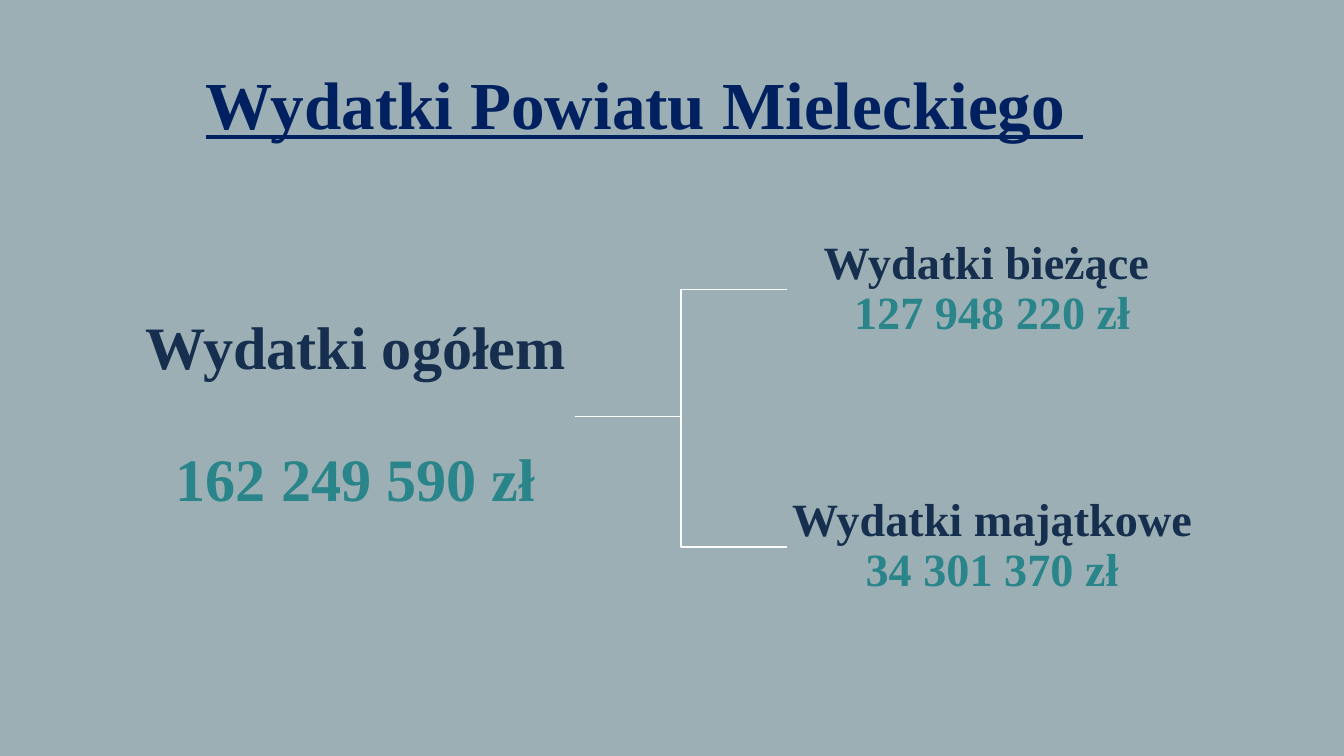
"""Build a slide that splits the county's total spending into two parts."""
from lxml.etree import SubElement
from pptx import Presentation
from pptx.dml.color import RGBColor
from pptx.enum.shapes import MSO_CONNECTOR, MSO_SHAPE
from pptx.enum.text import MSO_ANCHOR, PP_ALIGN
from pptx.oxml.ns import qn
from pptx.util import Inches, Pt

COLORS = {"bg": "9BAFB5", "title": "002060", "name": "162F4E",
          "amount": "2A858A", "line": "FFFFFF"}
FONT = "Times New Roman"


def rgb(key):
    return RGBColor.from_string(COLORS[key])


def style(p, size, *colors):
    p.alignment = PP_ALIGN.CENTER
    p.line_spacing = 0.9
    for r, color in zip(p.runs, colors):
        r.font.name = FONT
        r.font.size = Pt(size)
        r.font.bold = True
        r.font.color.rgb = rgb(color)


prs = Presentation()
prs.slide_width, prs.slide_height = Inches(13.33), Inches(7.5)
s = prs.slides.add_slide(prs.slide_layouts[5])
s.background.fill.solid()
s.background.fill.fore_color.rgb = rgb("bg")

title = s.shapes.title
title.left, title.top = Inches(0.55), Inches(0.66)
title.width, title.height = Inches(11.68), Inches(1.06)
tf = title.text_frame
tf.text = "Wydatki Powiatu Mieleckiego \v"
tf.vertical_anchor = MSO_ANCHOR.TOP
p = tf.paragraphs[0]
style(p, 48, "title")
p.space_before = Pt(10)
p.runs[0].font.underline = True

total = s.shapes.add_textbox(Inches(1.35), Inches(3.03), Inches(4.35), Inches(2.2))
tf = total.text_frame
tf.word_wrap = True
tf.vertical_anchor = MSO_ANCHOR.MIDDLE
tf.margin_left = tf.margin_right = Inches(0.03)
tf.text = "Wydatki ogółem\n162 249 590 zł"
for p, color in zip(tf.paragraphs, ("name", "amount")):
    style(p, 43, color)
tf.paragraphs[1].space_before = Pt(48)

parts = [("Wydatki bieżące \v", "127 948 220 zł", 2.31),
         ("Wydatki majątkowe ", "34 301 370 zł", 4.86)]
for name, amount, top in parts:
    sp = s.shapes.add_shape(MSO_SHAPE.RECTANGLE, Inches(7.81), Inches(top),
                            Inches(4.06), Inches(1.13))
    sp.shadow.inherit = False
    sp.fill.solid()
    sp.fill.fore_color.rgb = rgb("bg")
    sp.line.fill.background()
    tf = sp.text_frame
    tf.word_wrap = True
    tf.vertical_anchor = MSO_ANCHOR.MIDDLE
    tf.margin_left = tf.margin_right = Inches(0.02)
    tf.margin_top = tf.margin_bottom = Inches(0.02)
    p = tf.paragraphs[0]
    p.text = name
    p.add_run().text = amount
    style(p, 33, "name", "amount")

    line = s.shapes.add_connector(MSO_CONNECTOR.ELBOW, 0, 0, 0, 0)
    line.begin_connect(total, 3)
    line.end_connect(sp, 1)
    line.line.color.rgb = rgb("line")
    line.line.width = Pt(1)
    SubElement(line._element.spPr, qn("a:effectLst"))

prs.save("out.pptx")
